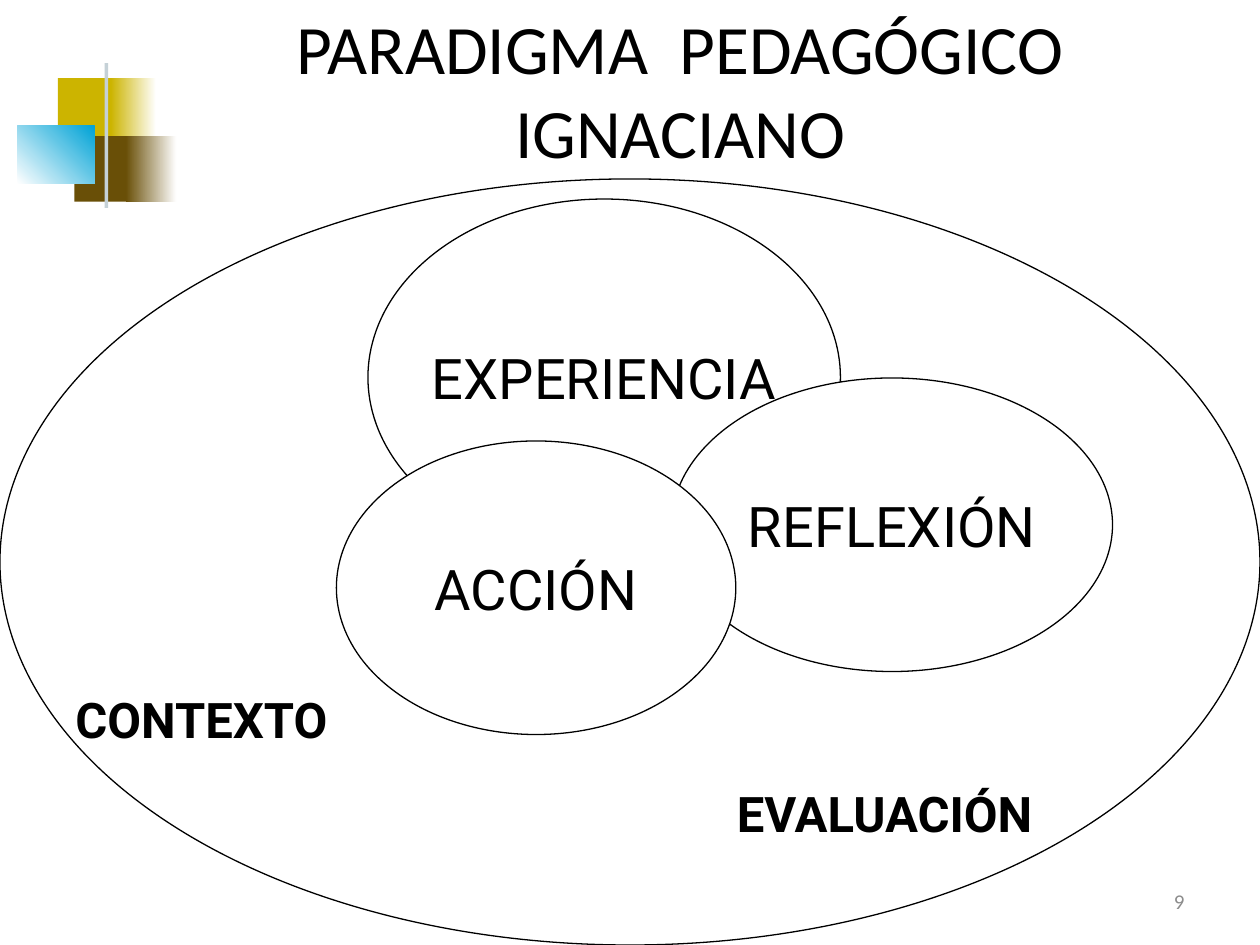
from pptx import Presentation
from pptx.dml.color import RGBColor
from pptx.enum.shapes import MSO_SHAPE
from pptx.enum.text import MSO_ANCHOR, MSO_AUTO_SIZE, PP_ALIGN
from pptx.util import Inches, Pt

RECT, OVAL = MSO_SHAPE.RECTANGLE, MSO_SHAPE.OVAL
MIDDLE, TOP = MSO_ANCHOR.MIDDLE, MSO_ANCHOR.TOP
LEFT, CENTER, RIGHT = PP_ALIGN.LEFT, PP_ALIGN.CENTER, PP_ALIGN.RIGHT
NO_AUTOFIT = MSO_AUTO_SIZE.NONE
TITLE_ONLY = 5

COLORS = {
    "ink": "000000",
    "paper": "FFFFFF",
    "gold": "CCB400",
    "brown": "694F07",
    "blue": "00A3D6",
    "bar": "C5D1D7",
    "number": "8C8C8C",
}


class SlideBuilder:
    heading_font = "Calibri"
    body_font = "Roboto"

    def __init__(self, slide):
        self.slide = slide

    def color(self, name):
        return RGBColor.from_string(COLORS[name])

    def set_text(self, frame, text, size, font, color="ink", align=LEFT,
                 anchor=TOP, bold=False, wrap=True):
        frame.text = text
        frame.word_wrap = wrap
        frame.auto_size = NO_AUTOFIT
        frame.vertical_anchor = anchor
        paragraph = frame.paragraphs[0]
        paragraph.alignment = align
        paragraph.font.size = Pt(size)
        paragraph.font.name = font
        paragraph.font.bold = bold
        paragraph.font.color.rgb = self.color(color)

    def title(self, text, box):
        heading = self.slide.shapes.title
        heading.left, heading.top, heading.width, heading.height = map(Inches, box)
        self.set_text(heading.text_frame, text, 39.6, self.heading_font,
                      align=CENTER, anchor=MIDDLE)

    def label(self, text, box, size, font, **style):
        area = self.slide.shapes.add_textbox(*map(Inches, box))
        self.set_text(area.text_frame, text, size, font, **style)

    def block(self, box, start, end=None, angle=0):
        block = self.slide.shapes.add_shape(RECT, *map(Inches, box))
        block.shadow.inherit = False
        block.line.fill.background()
        if end is None:
            block.fill.solid()
            block.fill.fore_color.rgb = self.color(start)
            return
        block.fill.gradient()
        block.fill.gradient_angle = angle
        for stop, name, position in zip(block.fill.gradient_stops, (start, end), (0, 1)):
            stop.color.rgb = self.color(name)
            stop.position = position

    def ellipse(self, box, text=None, filled=True):
        oval = self.slide.shapes.add_shape(OVAL, *map(Inches, box))
        oval.shadow.inherit = False
        oval.line.color.rgb = self.color("ink")
        oval.line.width = Pt(0.75)
        if filled:
            oval.fill.solid()
            oval.fill.fore_color.rgb = self.color("paper")
        else:
            oval.fill.background()
        if text:
            self.set_text(oval.text_frame, text, 32, self.body_font,
                          align=CENTER, anchor=MIDDLE, wrap=False)


def main():
    deck = Presentation()
    deck.slide_width, deck.slide_height = Inches(10), Inches(7.5)
    builder = SlideBuilder(deck.slides.add_slide(deck.slide_layouts[TITLE_ONLY]))

    builder.block((0.46, 0.62, 0.48, 0.52), "gold")
    builder.block((0.88, 0.62, 0.36, 0.52), "gold", "paper")
    builder.block((0.59, 1.08, 0.46, 0.52), "brown")
    builder.block((1, 1.08, 0.4, 0.52), "brown", "paper")
    builder.block((0.14, 1, 0.61, 0.46), "paper", "blue", angle=45)
    builder.block((0.83, 0.5, 0.03, 1.15), "bar")

    builder.title("PARADIGMA  PEDAGÓGICO IGNACIANO", (1.14, 0.08, 8.52, 1.25))
    builder.label("9", (7.17, 6.95, 2.33, 0.4), 12, builder.heading_font,
                  color="number", align=RIGHT, anchor=MIDDLE)

    builder.ellipse((0, 1.42, 10, 6.08), filled=False)
    builder.ellipse((2.92, 1.58, 3.75, 2.83), "EXPERIENCIA", filled=False)
    builder.ellipse((5.33, 3, 3.5, 2.33), "REFLEXIÓN")
    builder.ellipse((2.67, 3.5, 3.17, 2.33), "ACCIÓN")

    for text, left, top in (("CONTEXTO", 0.5, 5.42), ("EVALUACIÓN", 5.75, 6.17)):
        builder.label(text, (left, top, 2.92, 0.57), 28, builder.body_font, bold=True)

    deck.save("out.pptx")


if __name__ == "__main__":
    main()
